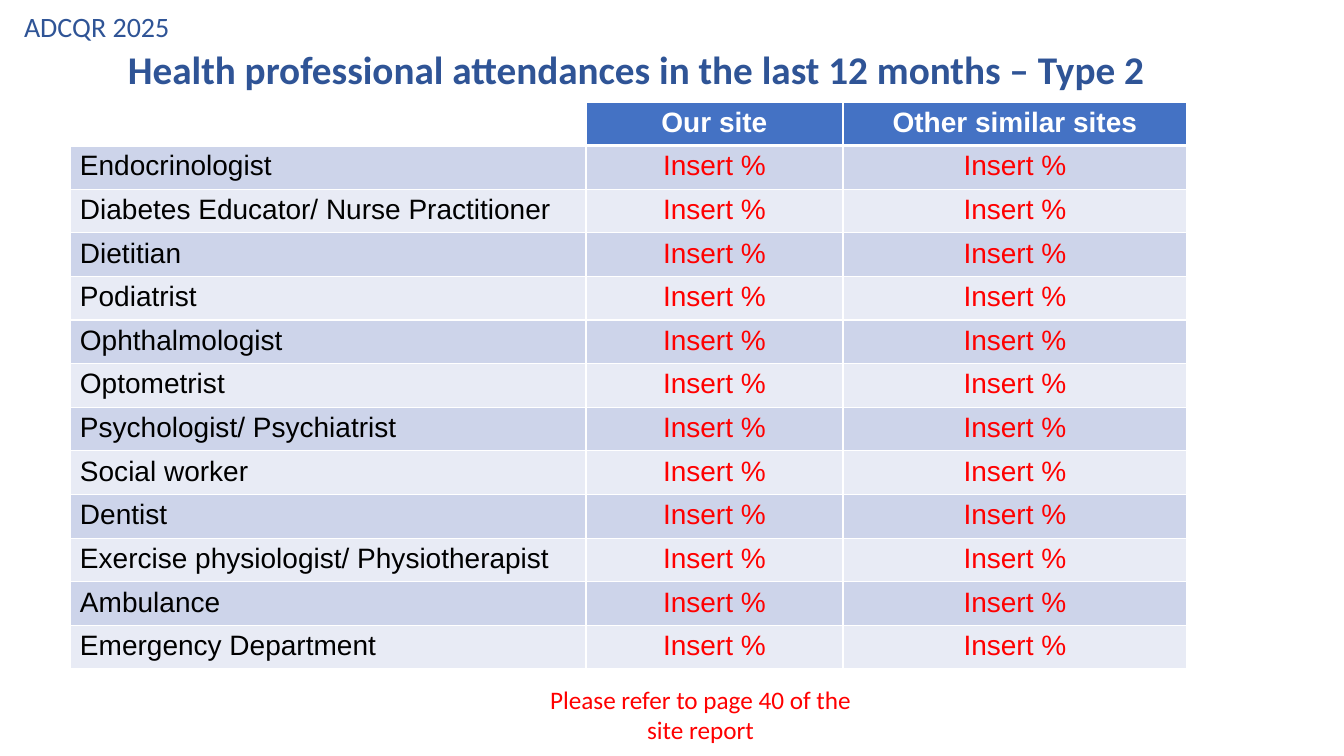
"""Build the slide on health professional attendances for type 2 diabetes."""
from dataclasses import dataclass

from lxml import etree
from pptx import Presentation
from pptx.dml.color import RGBColor
from pptx.enum.text import MSO_ANCHOR, MSO_AUTO_SIZE, PP_ALIGN
from pptx.oxml.ns import qn
from pptx.util import Emu, Pt

LEFT, CENTER = PP_ALIGN.LEFT, PP_ALIGN.CENTER
TOP, MIDDLE = MSO_ANCHOR.TOP, MSO_ANCHOR.MIDDLE
NO_FIT, GROW = MSO_AUTO_SIZE.NONE, MSO_AUTO_SIZE.SHAPE_TO_FIT_TEXT

COLORS = {
    "navy": "2F5496",
    "header": "4472C4",
    "odd_row": "CDD4EA",
    "even_row": "E8EBF5",
    "white": "FFFFFF",
    "black": "000000",
    "red": "FF0000",
}
EMU_PER_INCH = 914400
PX_PER_INCH = 100.8
SLIDE_SIZE = (1344, 756)
TABLE_AREA = (70, 102, 1117, 567)
TITLE_ONLY = 5
PLACEHOLDER_VALUE = "Insert %"
PROFESSIONALS = [
    "Endocrinologist",
    "Diabetes Educator/ Nurse Practitioner",
    "Dietitian",
    "Podiatrist",
    "Ophthalmologist",
    "Optometrist",
    "Psychologist/ Psychiatrist",
    "Social worker",
    "Dentist",
    "Exercise physiologist/ Physiotherapist",
    "Ambulance",
    "Emergency Department",
]


@dataclass(frozen=True)
class Column:
    """A table column with its header and the look of its body cells."""
    header: str
    width: int
    color: str
    align: PP_ALIGN


@dataclass(frozen=True)
class Caption:
    """A free text block on the slide."""
    text: str
    area: tuple[int, int, int, int]
    size: int
    color: str
    bold: bool
    align: PP_ALIGN
    inset: int


COLUMNS = [
    Column("", 516, "black", LEFT),
    Column("Our site", 257, "red", CENTER),
    Column("Other similar sites", 344, "red", CENTER),
]
CAPTIONS = [
    Caption("Health professional attendances in the last 12 months – Type 2",
            (118, 40, 1134, 57), 28, "navy", True, LEFT, 5),
    Caption("Please refer to page 40 of the site report",
            (535, 674, 331, 82), 18, "red", False, CENTER, 10),
]


def px(length: float) -> Emu:
    """Turn px into EMU."""
    return Emu(round(length * EMU_PER_INCH / PX_PER_INCH))


def write(frame, text: str, *, size: int, color: str, font: str = "Calibri",
          bold: bool = False, align: PP_ALIGN = LEFT, spacing: float = 1.0) -> None:
    """Fill a text frame with one formatted paragraph."""
    paragraph = frame.paragraphs[0]
    paragraph.alignment = align
    paragraph.line_spacing = spacing
    paragraph.font.size = Pt(size)
    if text:
        run = paragraph.add_run()
        run.text = text
        run.font.name = font
        run.font.size = Pt(size)
        run.font.bold = bold
        run.font.color.rgb = RGBColor.from_string(COLORS[color])


def set_frame(frame, inset: int, anchor: MSO_ANCHOR, fit: MSO_AUTO_SIZE) -> None:
    """Set wrapping, anchor, fit and insets of a text frame."""
    frame.word_wrap = True
    frame.auto_size = fit
    frame.vertical_anchor = anchor
    frame.margin_left = frame.margin_right = px(10)
    frame.margin_top = frame.margin_bottom = px(inset)


def set_borders(cell, top: int, bottom: int) -> None:
    """Give a cell white borders, with widths in points."""
    properties = cell._tc.get_or_add_tcPr()
    widths = {"lnL": 1, "lnR": 1, "lnT": top, "lnB": bottom}
    for position, (side, width) in enumerate(widths.items()):
        line = etree.Element(qn(f"a:{side}"), w=str(Pt(width)))
        fill = etree.SubElement(line, qn("a:solidFill"))
        etree.SubElement(fill, qn("a:srgbClr"), val=COLORS["white"])
        properties.insert(position, line)


def fill_cell(cell, text: str, *, fill: str, color: str, align: PP_ALIGN,
              bold: bool = False, top: int = 1, bottom: int = 1) -> None:
    """Write, fill and border one table cell."""
    cell.margin_left = cell.margin_right = px(10)
    cell.margin_top = cell.margin_bottom = px(5)
    cell.fill.solid()
    cell.fill.fore_color.rgb = RGBColor.from_string(COLORS[fill])
    set_borders(cell, top, bottom)
    write(cell.text_frame, text, size=20, color=color, font="Arial", bold=bold, align=align)


def add_title(slide) -> None:
    """Place the survey name in the title placeholder."""
    title = slide.shapes.title
    title.left, title.top, title.width, title.height = map(px, (14, 13, 168, 30))
    set_frame(title.text_frame, 5, MIDDLE, NO_FIT)
    write(title.text_frame, "ADCQR 2025", size=20, color="navy", spacing=0.9)


def add_caption(slide, caption: Caption) -> None:
    """Add a free text block."""
    frame = slide.shapes.add_textbox(*map(px, caption.area)).text_frame
    set_frame(frame, caption.inset, TOP, GROW)
    write(frame, caption.text, size=caption.size, color=caption.color,
          bold=caption.bold, align=caption.align)


def add_attendance_table(slide) -> None:
    """Add the table of attendances by professional and site."""
    row_count = len(PROFESSIONALS) + 1
    table = slide.shapes.add_table(row_count, len(COLUMNS), *map(px, TABLE_AREA)).table
    table.horz_banding = False
    for row in table.rows:
        row.height = px(TABLE_AREA[3] / row_count)
    for index, column in enumerate(COLUMNS):
        table.columns[index].width = px(column.width)
        fill_cell(table.cell(0, index), column.header,
                  fill="header" if column.header else "white",
                  color="white", align=CENTER, bold=True, bottom=3)
        for number, professional in enumerate(PROFESSIONALS, start=1):
            fill_cell(table.cell(number, index),
                      PLACEHOLDER_VALUE if column.header else professional,
                      fill="odd_row" if number % 2 else "even_row",
                      color=column.color, align=column.align,
                      top=3 if number == 1 else 1)


def main() -> None:
    """Build and save the presentation."""
    presentation = Presentation()
    presentation.slide_width, presentation.slide_height = map(px, SLIDE_SIZE)
    slide = presentation.slides.add_slide(presentation.slide_layouts[TITLE_ONLY])
    heading, page_note = CAPTIONS
    add_title(slide)
    add_caption(slide, heading)
    add_attendance_table(slide)
    add_caption(slide, page_note)
    presentation.save("out.pptx")


if __name__ == "__main__":
    main()
